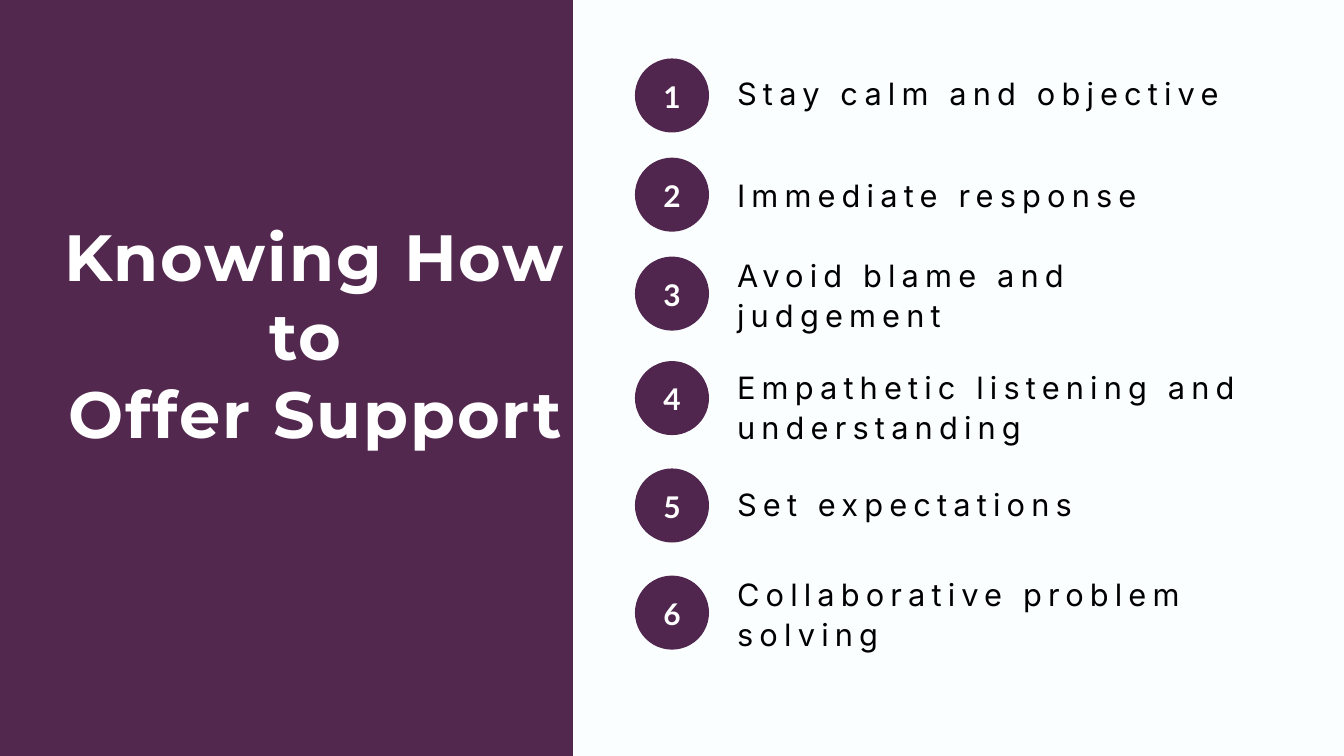
from pptx import Presentation
from pptx.dml.color import RGBColor
from pptx.enum.shapes import MSO_SHAPE
from pptx.enum.text import MSO_ANCHOR, MSO_AUTO_SIZE, PP_ALIGN
from pptx.util import Cm, Pt

PLUM = RGBColor(0x53, 0x28, 0x4F)
DARK_PLUM = RGBColor(0x51, 0x26, 0x4E)
WHITE = RGBColor(0xFF, 0xFF, 0xFF)
BLACK = RGBColor(0, 0, 0)
PAPER = RGBColor(0xFA, 0xFE, 0xFF)

# Content; the trailing space is part of the centred line
TITLE = ["Knowing How to ", "Offer Support"]
# Step, top of its badge, top of its text (cm)
STEPS = [
    ("Stay calm and objective", 2.21, 2.72),
    ("Immediate response", 5.96, 6.55),
    ("Avoid blame and judgement", 9.7, 9.58),
    ("Empathetic listening and understanding", 13.65, 13.82),
    ("Set expectations", 17.71, 18.24),
    ("Collaborative problem solving", 21.76, 21.64),
]

PANEL_W = Cm(21.66)
BADGE_X, BADGE_D = Cm(24), Cm(2.8)
STEP_X, STEP_W, STEP_H = Cm(27.86), Cm(20.07), Cm(1.5)


def set_frame(tf, anchor=MSO_ANCHOR.TOP, wrap=True):
    tf.auto_size = MSO_AUTO_SIZE.NONE
    tf.word_wrap = wrap
    tf.vertical_anchor = anchor
    tf.margin_left = tf.margin_right = tf.margin_top = tf.margin_bottom = 0


def write(p, text, font, size, color, line, align, bold=False, spacing=0):
    p.alignment = align
    p.line_spacing = Pt(line)
    p.space_before = Pt(0)
    r = p.add_run()
    r.text = text
    r.font.name, r.font.size, r.font.bold = font, Pt(size), bold
    r.font.color.rgb = color
    if spacing:
        r.font._element.set("spc", str(round(spacing * 100)))


def add_solid(s, kind, x, y, w, h, color):
    sp = s.shapes.add_shape(kind, x, y, w, h)
    sp.shadow.inherit = False
    sp.fill.solid()
    sp.fill.fore_color.rgb = color
    sp.line.fill.background()
    return sp


def main():
    prs = Presentation()
    prs.slide_width, prs.slide_height = Cm(50.8), Cm(28.58)
    s = prs.slides.add_slide(prs.slide_layouts[5])
    s.background.fill.solid()
    s.background.fill.fore_color.rgb = PAPER

    # Left panel, with the title brought in front of it
    add_solid(s, MSO_SHAPE.RECTANGLE, 0, 0, PANEL_W, prs.slide_height, PLUM)
    title = s.shapes.title
    s.shapes._spTree.append(title._element)
    title.left, title.top = Cm(2.18), Cm(8.18)
    title.width, title.height = Cm(19.48), Cm(8.81)
    tf = title.text_frame
    set_frame(tf)
    for i, text in enumerate(TITLE):
        p = tf.add_paragraph() if i else tf.paragraphs[0]
        write(p, text, "Montserrat", 70, WHITE, 84, PP_ALIGN.CENTER, True, 2.1)

    # Numbered steps
    for number, (text, badge_y, text_y) in enumerate(STEPS, 1):
        badge = add_solid(s, MSO_SHAPE.OVAL, BADGE_X, Cm(badge_y),
                          BADGE_D, BADGE_D, DARK_PLUM)
        tf = badge.text_frame
        set_frame(tf, MSO_ANCHOR.MIDDLE, wrap=False)
        tf.margin_bottom = Cm(0.18)
        write(tf.paragraphs[0], str(number), "Lato", 32, WHITE, 44.8,
              PP_ALIGN.CENTER, True)

        lines = 2 if len(text) > 24 else 1
        box = s.shapes.add_textbox(STEP_X, Cm(text_y), STEP_W, STEP_H * lines)
        set_frame(box.text_frame)
        write(box.text_frame.paragraphs[0], text, "Inter", 33, BLACK, 42.9,
              PP_ALIGN.LEFT, spacing=6.6)

    prs.save("out.pptx")


if __name__ == "__main__":
    main()
